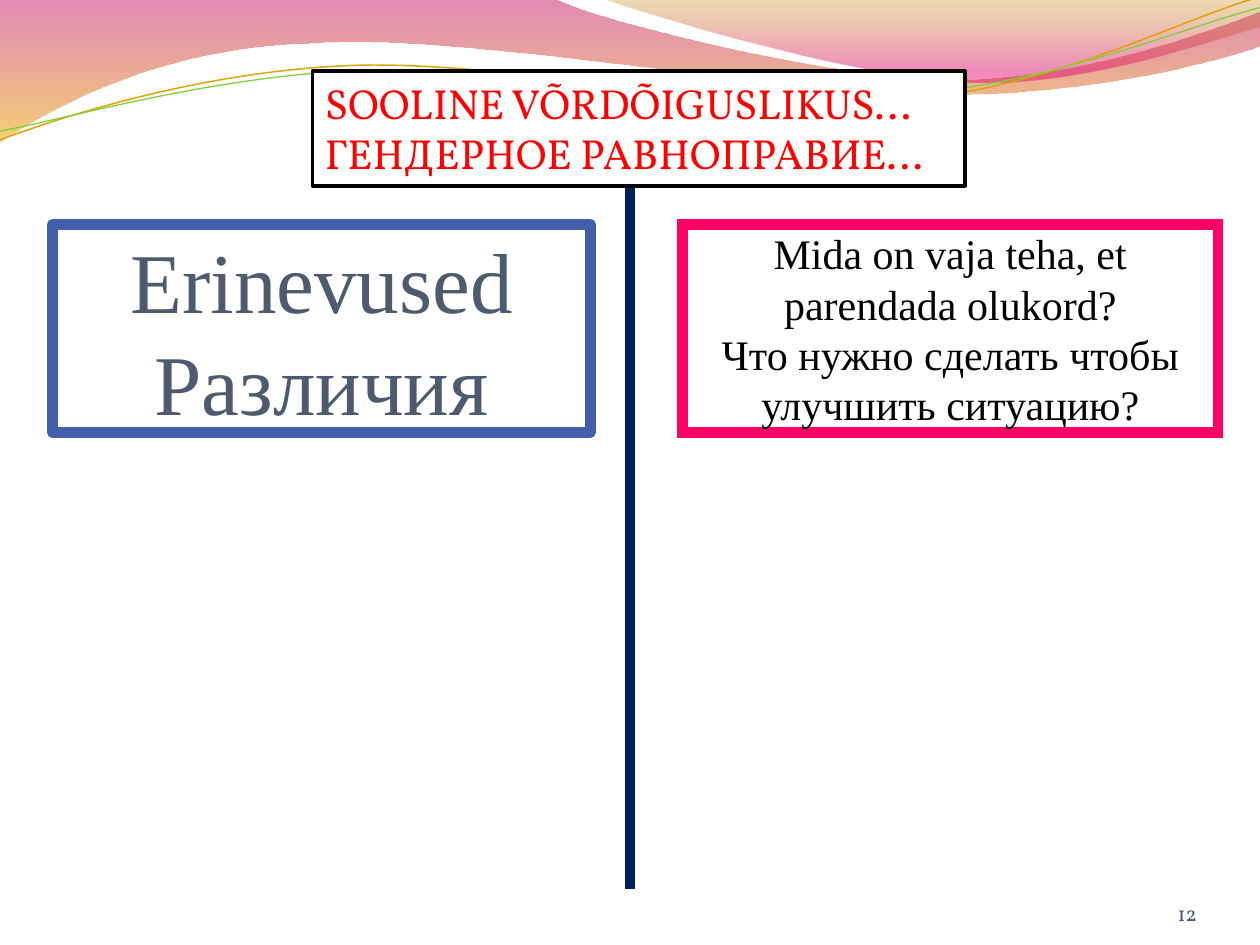
from dataclasses import dataclass
from math import cos, radians, sin
from typing import Optional

from lxml import etree
from pptx import Presentation
from pptx.dml.color import RGBColor
from pptx.enum.shapes import MSO_CONNECTOR, MSO_SHAPE
from pptx.enum.text import MSO_ANCHOR, PP_ALIGN
from pptx.oxml.ns import qn
from pptx.util import Inches, Pt

COLS, ROWS = 100, 75
WIDE, HIGH = Inches(10), Inches(7.5)
TILT = -2.7

RECT, LINE = MSO_SHAPE.RECTANGLE, MSO_CONNECTOR.STRAIGHT
TOP, MID, BASE = MSO_ANCHOR.TOP, MSO_ANCHOR.MIDDLE, MSO_ANCHOR.BOTTOM
LEFT, MIDST, RIGHT = PP_ALIGN.LEFT, PP_ALIGN.CENTER, PP_ALIGN.RIGHT

WHITE = RGBColor(0xFF, 0xFF, 0xFF)
BLACK = RGBColor(0x00, 0x00, 0x00)
RED = RGBColor(0xFF, 0x00, 0x00)
ROSE = RGBColor(0xFF, 0x00, 0x66)
NAVY = RGBColor(0x00, 0x20, 0x60)
BLUE = RGBColor(0x43, 0x5E, 0xAA)
SLATE = RGBColor(0x4E, 0x5B, 0x6F)
STEEL = RGBColor(0x4B, 0x57, 0x6A)
WINE = RGBColor(0xBD, 0x00, 0x59)
AMBER = RGBColor(0xF0, 0xAB, 0x00)
OCHRE = RGBColor(0xC3, 0x8B, 0x00)
PINK = RGBColor(0xE1, 0x00, 0x6B)
GOLD = RGBColor(0xE0, 0xA2, 0x09)
GREEN = RGBColor(0x7F, 0xD1, 0x3B)

SERIF, BOOK = "Times New Roman", "Vollkorn"


@dataclass(frozen=True)
class Box:
    area: tuple
    lines: tuple
    font: str
    size: float
    ink: RGBColor
    align: PP_ALIGN
    anchor: MSO_ANCHOR
    edge: Optional[RGBColor] = None
    width: float = 0
    fill: Optional[RGBColor] = None
    inset: tuple = (0.1, 0.05, 0.1, 0.05)
    sharp: bool = False


@dataclass(frozen=True)
class Stop:
    place: float
    tint: RGBColor
    alpha: int


@dataclass(frozen=True)
class Wave:
    start: tuple
    legs: tuple
    stops: tuple = ()
    edge: Optional[RGBColor] = None
    width: float = 0
    pivot: Optional[tuple] = None


WAVES = (
    Wave((0, 0), (
        (44, -0.1),
        (47.6, 1.7, 66.4, 6.3, 75.8, 6.3),
        (85.3, 6.3, 95.8, 2.6, 100, 0.9),
        (100.1, 3.6),
        (98.3, 4.4, 87, 7.6, 74.6, 7.5),
        (62.2, 7.5, 38.2, 2.8, 25.7, 3.4),
        (12.9, 3.6, 4.6, 8.3, -0.1, 11.3),
        (0, 0),
    ), stops=(Stop(0, WINE, 45), Stop(1, AMBER, 55))),
    Wave((47.9, -0.1), (
        (50.9, 1.1, 68.2, 6.2, 76.9, 6.5),
        (85.6, 6.9, 96.1, 3.2, 100, 2.1),
        (100, 0),
        (47.9, -0.1),
    ), stops=(Stop(0, OCHRE, 30), Stop(0.8, PINK, 45))),
    Wave((0, 11.1), (
        (4.8, 9.3, 15.8, 5.7, 27.7, 5.2),
        (39.5, 4.7, 59.3, 8.9, 71.3, 8),
        (83.3, 7.1, 93.8, 1.5, 99.8, -0.2),
    ), edge=GOLD, width=0.85, pivot=(49.9, 5.75)),
    Wave((0, 10.4), (
        (4.7, 9.6, 16.4, 6.1, 28.3, 5.6),
        (40.3, 5.1, 59.7, 8.4, 71.7, 7.5),
        (83.6, 6.7, 94.1, 2.1, 100, 0.6),
    ), edge=GREEN, width=0.75, pivot=(49.95, 5.9)),
)

BOXES = (
    Box((4.17, 17.8, 42.7, 16.54), ("Erinevused\nРазличия",), SERIF, 48.6,
        SLATE, MIDST, BASE, BLUE, 6, inset=(0, 0.05, 0, 0)),
    Box((86.7, 69.5, 8.3, 4), ("12",), BOOK, 12, STEEL, RIGHT, BASE,
        inset=(0, 0, 0, 0)),
    Box((54.17, 17.8, 42.5, 16.54),
        ("Mida on vaja teha, et parendada olukord?\n"
         "Что нужно сделать чтобы улучшить ситуацию?",),
        SERIF, 24, BLACK, MIDST, MID, ROSE, 6, sharp=True),
)
BANNER = Box((24.8, 5.65, 51.8, 9.1),
             ("SOOLINE VÕRDÕIGUSLIKUS...", "ГЕНДЕРНОЕ РАВНОПРАВИЕ…"),
             BOOK, 24, RED, LEFT, TOP, BLACK, 2, WHITE)


def across(col: float) -> int:
    return round(WIDE * col / COLS)


def down(row: float) -> int:
    return round(HIGH * row / ROWS)


def place(spot: tuple, pivot: Optional[tuple]) -> tuple:
    x, y = spot
    if pivot:
        turn = radians(-TILT)
        dx, dy = x - pivot[0], y - pivot[1]
        x = pivot[0] + dx * cos(turn) - dy * sin(turn)
        y = pivot[1] + dx * sin(turn) + dy * cos(turn)
    return across(x), down(y)


def bend(shape, legs: tuple) -> None:
    sides = iter(list(shape._element.iter(qn("a:lnTo"))))
    for leg in legs:
        first = next(sides)
        if len(leg) == 6:
            first.tag = qn("a:cubicBezTo")
            for side in (next(sides), next(sides)):
                first.append(side[0])
                side.getparent().remove(side)


def shade(fill, stops: tuple) -> None:
    fill.gradient()
    fill.gradient_angle = 270
    for slot, stop in zip(fill.gradient_stops, stops):
        slot.position = stop.place
        slot.color.rgb = stop.tint
    tints = fill._xPr.iter(qn("a:srgbClr"))
    for tint, stop in zip(tints, stops):
        etree.SubElement(tint, qn("a:alpha"), val=str(stop.alpha * 1000))


def outline(line, tint: Optional[RGBColor], width: float) -> None:
    if tint is None:
        line.fill.background()
    else:
        line.color.rgb = tint
        line.width = Pt(width)


def draw_wave(slide, wave: Wave) -> None:
    spots = [place(leg[i:i + 2], wave.pivot)
             for leg in wave.legs for i in range(0, len(leg), 2)]
    pen = slide.shapes.build_freeform(*place(wave.start, wave.pivot))
    pen.add_line_segments(spots, close=bool(wave.stops))
    shape = pen.convert_to_shape()
    bend(shape, wave.legs)
    shape.shadow.inherit = False
    if wave.pivot:
        shape.rotation = TILT
    if wave.stops:
        shade(shape.fill, wave.stops)
    else:
        shape.fill.background()
    outline(shape.line, wave.edge, wave.width)


def draw_box(slide, box: Box) -> None:
    x, y, w, h = box.area
    spot = across(x), down(y), across(w), down(h)
    if box.edge is None:
        shape = slide.shapes.add_textbox(*spot)
    else:
        shape = slide.shapes.add_shape(RECT, *spot)
        shape.shadow.inherit = False
        outline(shape.line, box.edge, box.width)
        if box.fill is None:
            shape.fill.background()
        else:
            shape.fill.solid()
            shape.fill.fore_color.rgb = box.fill
        if box.sharp:
            edge = shape.line._get_or_add_ln()
            etree.SubElement(edge, qn("a:miter"), lim="800000")
    frame = shape.text_frame
    frame.word_wrap = True
    frame.vertical_anchor = box.anchor
    (frame.margin_left, frame.margin_top,
     frame.margin_right, frame.margin_bottom) = map(Inches, box.inset)
    for index, line in enumerate(box.lines):
        para = frame.add_paragraph() if index else frame.paragraphs[0]
        para.text, para.alignment = line, box.align
        font = para.font
        font.name, font.size, font.color.rgb = box.font, Pt(box.size), box.ink


def draw_rule(slide, col: float, top: float, base: float) -> None:
    rule = slide.shapes.add_connector(
        LINE, across(col), down(top), across(col), down(base))
    outline(rule.line, NAVY, 6)
    etree.SubElement(rule._element.spPr, qn("a:effectLst"))


def main() -> None:
    """Build the slide on differences and gender equality."""
    deck = Presentation()
    deck.slide_width, deck.slide_height = WIDE, HIGH
    slide = deck.slides.add_slide(deck.slide_layouts[6])
    for wave in WAVES:
        draw_wave(slide, wave)
    for box in BOXES:
        draw_box(slide, box)
    draw_rule(slide, COLS / 2, 14.7, 70.56)
    draw_box(slide, BANNER)
    deck.save("out.pptx")


if __name__ == "__main__":
    main()
